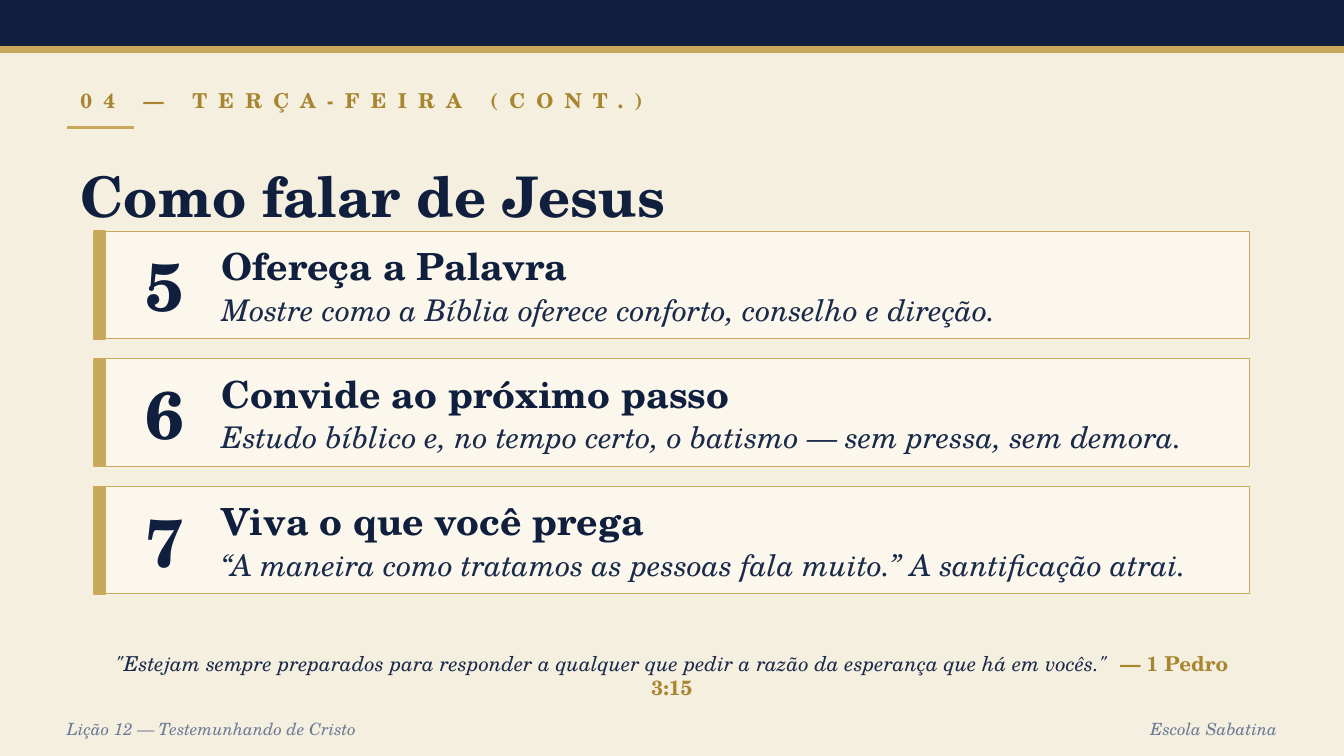
from lxml.etree import SubElement
from pptx import Presentation
from pptx.dml.color import RGBColor
from pptx.enum.shapes import MSO_CONNECTOR, MSO_SHAPE
from pptx.enum.text import MSO_ANCHOR, PP_ALIGN
from pptx.oxml.ns import qn
from pptx.util import Inches, Pt

NAVY = RGBColor(0x0F, 0x1F, 0x3D)
INK = RGBColor(0x1A, 0x2A, 0x4A)
GOLD = RGBColor(0xC9, 0xA8, 0x5C)
DARK_GOLD = RGBColor(0xA8, 0x86, 0x2F)
SLATE = RGBColor(0x6B, 0x7A, 0x95)
CREAM = RGBColor(0xF5, 0xEF, 0xE0)
IVORY = RGBColor(0xFB, 0xF7, 0xEC)

FONT = "TeX Gyre Schola"
FOOTER = {"size": Pt(9), "italic": True, "color": SLATE}
REFERENCE = {"size": Pt(11), "bold": True, "color": DARK_GOLD}
KICKER = {**REFERENCE, "spacing": 6}
TITLE = {"size": Pt(30), "bold": True, "color": NAVY}
NUMBER = {"size": Pt(36), "bold": True, "color": NAVY}
HEADING = {"size": Pt(20), "bold": True, "color": NAVY}
DETAIL = {"size": Pt(16), "italic": True, "color": INK}
QUOTE = {"size": Pt(11), "italic": True, "color": INK}
QUOTE_GAP = {**QUOTE, "spacing": 3}

CARD_LEFT, CARD_TOP, CARD_STEP = 0.7, 1.72, 0.95
CARD_WIDTH, CARD_HEIGHT = 8.6, 0.8
STEPS = [
    ("5", "Ofereça a Palavra",
     "Mostre como a Bíblia oferece conforto, conselho e direção."),
    ("6", "Convide ao próximo passo",
     "Estudo bíblico e, no tempo certo, o batismo — sem pressa, sem demora."),
    ("7", "Viva o que você prega",
     "“A maneira como tratamos as pessoas fala muito.” A santificação atrai."),
]


def add_rectangle(page, place, fill, line, line_width=1):
    shape = page.shapes.add_shape(MSO_SHAPE.RECTANGLE, *map(Inches, place))
    shape.shadow.inherit = False
    shape.fill.solid()
    shape.fill.fore_color.rgb = fill
    shape.line.color.rgb = line
    shape.line.width = Pt(line_width)


def add_rule(page, start, end, color, width):
    rule = page.shapes.add_connector(
        MSO_CONNECTOR.STRAIGHT, *map(Inches, (*start, *end)))
    rule.line.color.rgb = color
    rule.line.width = Pt(width)
    SubElement(rule._element.spPr, qn("a:effectLst"))


def add_span(paragraph, text, style):
    span = paragraph.add_run()
    span.text = text
    span.font.name = FONT
    for name, value in style.items():
        if name == "color":
            span.font.color.rgb = value
        elif name == "spacing":
            span._r.get_or_add_rPr().set("spc", str(value * 100))
        else:
            setattr(span.font, name, value)


def add_text(page, place, spans, align=PP_ALIGN.LEFT):
    box = page.shapes.add_textbox(*map(Inches, place))
    frame = box.text_frame
    frame.word_wrap = True
    frame.vertical_anchor = MSO_ANCHOR.MIDDLE
    paragraph = frame.paragraphs[0]
    paragraph.alignment = align
    for text, style in spans:
        add_span(paragraph, text, style)


def add_card(page, top, number, heading, detail):
    add_rectangle(page, (CARD_LEFT, top, CARD_WIDTH, CARD_HEIGHT),
                  IVORY, GOLD, 0.5)
    add_rectangle(page, (CARD_LEFT, top, 0.08, CARD_HEIGHT), GOLD, GOLD)
    add_text(page, (0.95, top + 0.15, 0.55, 0.5), [(number, NUMBER)],
             PP_ALIGN.CENTER)
    add_text(page, (1.55, top + 0.08, 7.5, 0.35), [(heading, HEADING)])
    add_text(page, (1.55, top + 0.42, 7.5, 0.32), [(detail, DETAIL)])


def add_frame(page):
    page.background.fill.solid()
    page.background.fill.fore_color.rgb = CREAM
    add_rectangle(page, (0, 0, 10, 0.35), NAVY, NAVY)
    add_rectangle(page, (0, 0.35, 10, 0.04), GOLD, GOLD)
    add_text(page, (0.4, 5.3, 6, 0.25),
             [("Lição 12 — Testemunhando de Cristo", FOOTER)])
    add_text(page, (7.6, 5.3, 2, 0.25), [("Escola Sabatina", FOOTER)],
             PP_ALIGN.RIGHT)


def add_header(page):
    add_text(page, (0.5, 0.6, 9, 0.3), [("04 — TERÇA-FEIRA (CONT.)", KICKER)])
    add_rule(page, (0.5, 0.95), (1, 0.95), GOLD, 1.5)
    add_text(page, (0.5, 1.05, 9, 0.8), [("Como falar de Jesus", TITLE)])


def main():
    deck = Presentation()
    deck.slide_width = Inches(10)
    deck.slide_height = Inches(10 * 9 / 16)
    page = deck.slides.add_slide(deck.slide_layouts[6])
    add_frame(page)
    add_header(page)
    for index, step in enumerate(STEPS):
        add_card(page, CARD_TOP + index * CARD_STEP, *step)
    add_text(page, (CARD_LEFT, 4.85, CARD_WIDTH, 0.35), [
        ('"Estejam sempre preparados para responder a qualquer que pedir '
         'a razão da esperança que há em vocês."', QUOTE),
        (" ", QUOTE_GAP),
        ("— 1 Pedro 3:15", REFERENCE),
    ], PP_ALIGN.CENTER)
    deck.save("out.pptx")


if __name__ == "__main__":
    main()
